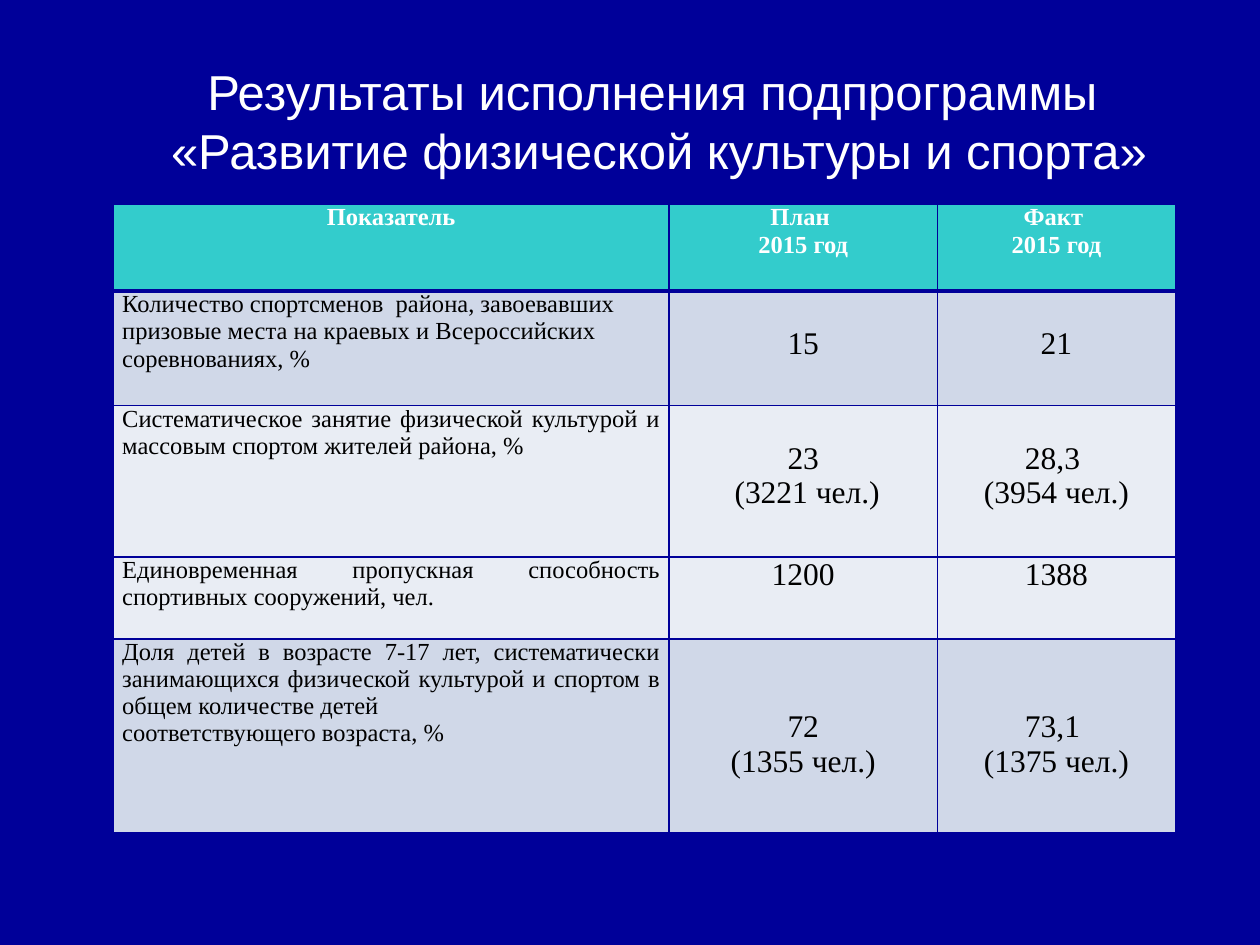
from lxml.etree import SubElement
from pptx import Presentation
from pptx.dml.color import RGBColor
from pptx.enum.text import MSO_AUTO_SIZE as AutoSize, PP_ALIGN as Align
from pptx.oxml.ns import qn
from pptx.util import Inches, Pt

NAVY, TEAL, WHITE, BLACK = "000099", "33CCCC", "FFFFFF", "000000"
BAND_DARK, BAND_LIGHT = "D0D8E8", "E9EDF4"
LINE_HEIGHT = 0.28


def color(value):
    return RGBColor.from_string(value)


class SlideBuilder:
    title_font = "Arial"
    table_font = "Times New Roman"

    def __init__(self, presentation):
        self.slide = presentation.slides.add_slide(presentation.slide_layouts[6])
        fill = self.slide.background.fill
        fill.solid()
        fill.fore_color.rgb = color(NAVY)

    def set_text(self, text_frame, text, font, size, ink, align, bold=False):
        text_frame.text = text
        for paragraph in text_frame.paragraphs:
            paragraph.alignment = align
            for run in paragraph.runs:
                run.font.name = font
                run.font.size = Pt(size)
                run.font.bold = bold
                run.font.color.rgb = color(ink)

    def title(self, text, left, top, width, height):
        shape = self.slide.shapes.add_textbox(*map(Inches, (left, top, width, height)))
        text_frame = shape.text_frame
        text_frame.word_wrap = False
        text_frame.auto_size = AutoSize.SHAPE_TO_FIT_TEXT
        self.set_text(text_frame, text, self.title_font, 28, WHITE, Align.CENTER)

    def table(self, left, top, widths, heights):
        frame = self.slide.shapes.add_table(
            len(heights), len(widths), Inches(left), Inches(top),
            Inches(sum(widths)), Inches(sum(heights)))
        for column, width in zip(frame.table.columns, widths):
            column.width = Inches(width)
        for row, height in zip(frame.table.rows, heights):
            row.height = Inches(height)
        return frame.table

    def borders(self, cell, top, bottom):
        properties = cell._tc.get_or_add_tcPr()
        for tag, width in (("lnL", 1), ("lnR", 1), ("lnT", top), ("lnB", bottom)):
            line = SubElement(properties, qn(f"a:{tag}"), w=str(Pt(width)))
            fill = SubElement(line, qn("a:solidFill"))
            SubElement(fill, qn("a:srgbClr"), val=NAVY)

    def cell(self, cell, text, fill, size, ink, align, bold=False,
             lines_above=0, top=1, bottom=1):
        self.borders(cell, top, bottom)
        cell.fill.solid()
        cell.fill.fore_color.rgb = color(fill)
        cell.margin_left = cell.margin_right = Inches(0.07)
        cell.margin_top = Inches(lines_above * LINE_HEIGHT)
        cell.margin_bottom = 0
        self.set_text(cell.text_frame, text, self.table_font, size, ink, align, bold)


HEADERS = ["Показатель", "План \n2015 год", "Факт \n2015 год"]
INDICATORS = [
    ("Количество спортсменов  района, завоевавших призовые места на краевых "
     "и Всероссийских соревнованиях, %",
     ["15", "21"], BAND_DARK, Align.LEFT, 1),
    ("Систематическое занятие физической культурой и массовым спортом "
     "жителей района, %",
     ["23\n (3221 чел.)", "28,3 \n(3954 чел.)"], BAND_LIGHT, Align.JUSTIFY, 1),
    ("Единовременная пропускная способность спортивных сооружений, чел.",
     ["1200", "1388"], BAND_LIGHT, Align.JUSTIFY, 0),
    ("Доля детей в возрасте 7-17 лет, систематически занимающихся физической "
     "культурой и спортом в общем количестве детей \n"
     "соответствующего возраста, %",
     ["72\n(1355 чел.)", "73,1 \n(1375 чел.)"], BAND_DARK, Align.JUSTIFY, 2),
]


def main():
    presentation = Presentation()
    presentation.slide_width = Inches(10)
    presentation.slide_height = Inches(7.5)
    builder = SlideBuilder(presentation)
    builder.title("Результаты исполнения подпрограммы \n"
                  "«Развитие физической культуры и спорта»", 1.21, 0.44, 8.04, 1.04)

    table = builder.table(0.9, 1.62, [4.41, 2.13, 1.89], [0.69, 0.91, 1.2, 0.65, 1.54])
    for column, header in enumerate(HEADERS):
        builder.cell(table.cell(0, column), header, TEAL, 14, WHITE,
                     Align.CENTER, bold=True, bottom=3)
    for row, (name, values, fill, align, lines_above) in enumerate(INDICATORS, 1):
        top = 3 if row == 1 else 1
        builder.cell(table.cell(row, 0), name, fill, 14, BLACK, align, top=top)
        for column, value in enumerate(values, 1):
            builder.cell(table.cell(row, column), value, fill, 18, BLACK,
                         Align.CENTER, lines_above=lines_above, top=top)
    presentation.save("out.pptx")


if __name__ == "__main__":
    main()
